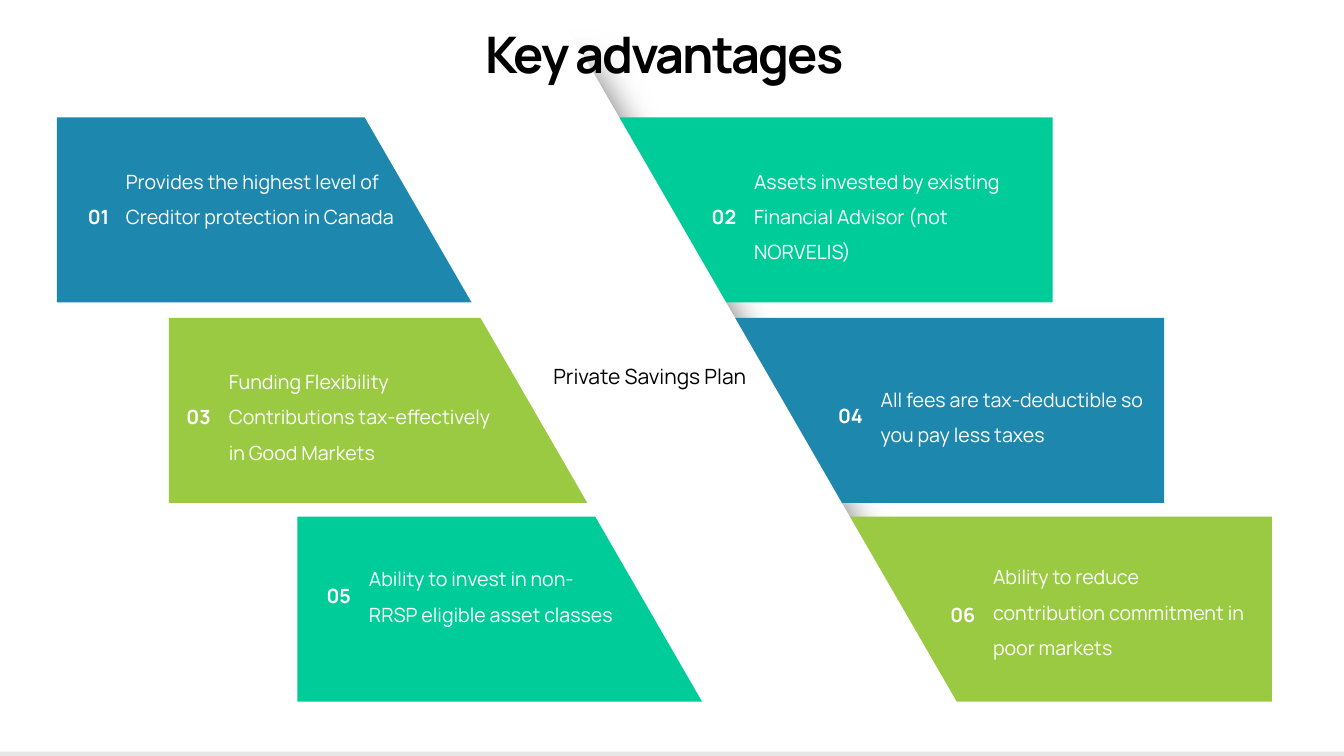
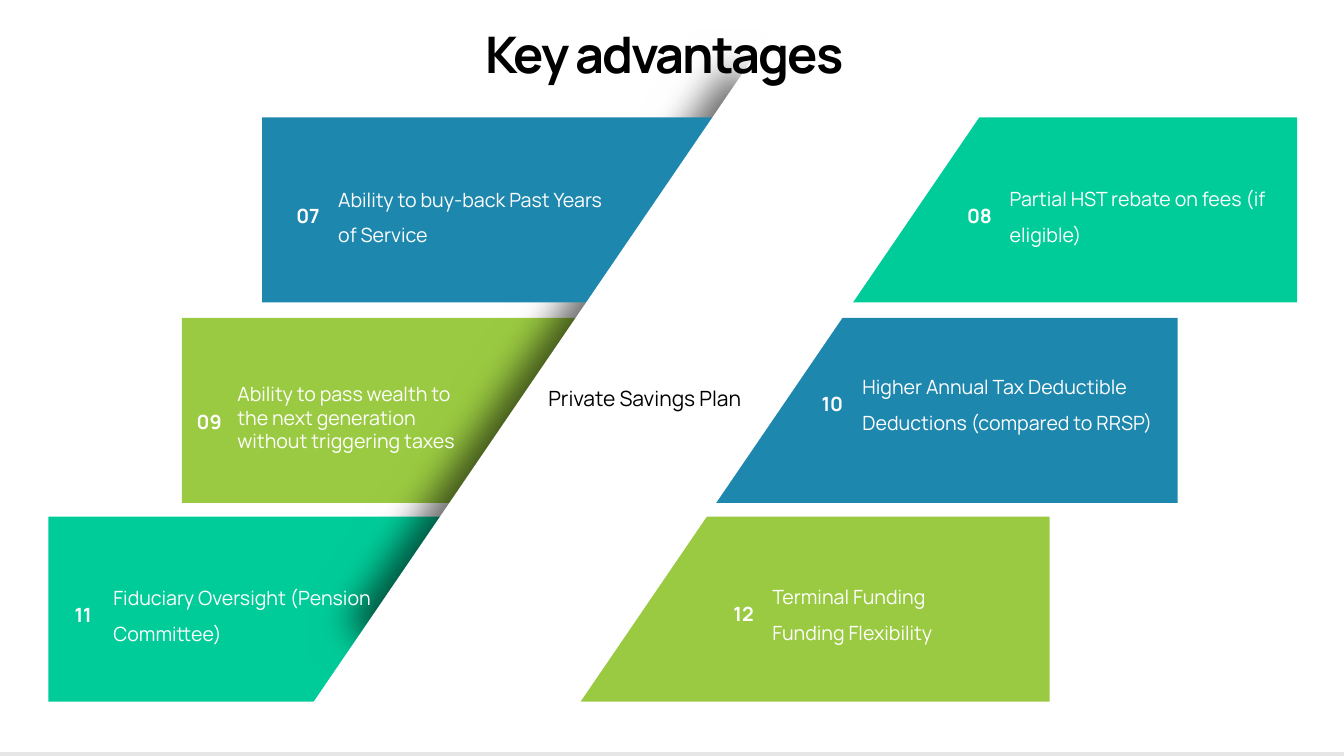
from lxml.etree import SubElement
from pptx import Presentation
from pptx.dml.color import RGBColor
from pptx.enum.shapes import MSO_SHAPE
from pptx.enum.text import MSO_ANCHOR, MSO_AUTO_SIZE, PP_ALIGN
from pptx.oxml.ns import qn
from pptx.util import Inches, Pt

BLUE = RGBColor(0x1E, 0x87, 0xAE)
TEAL = RGBColor(0x00, 0xCC, 0x99)
LIME = RGBColor(0x9A, 0xCA, 0x41)
GREY = RGBColor(0xE6, 0xE6, 0xE6)
WHITE = RGBColor(0xFF, 0xFF, 0xFF)
BLACK = RGBColor(0x00, 0x00, 0x00)

FONT = "Manrope"
ROWS = (2.33, 6.31, 10.25)
HEIGHT = 3.67
LEFT = (BLUE, LIME, TEAL)
RIGHT = (TEAL, BLUE, LIME)

PAGES = [
    {
        "left": [(1.13, 9.2), (3.35, 9.82), (5.9, 8.81)],
        "right": [(11.06, 9.82), (13.27, 9.82), (16.36, 8.87)],
        "inner": [(11, 0.86, 1.33, 13.38, 330), (13.24, 0.94, 1.33, 13.38, 330)],
        "outer": [(11.12, -2.17, 2.71, 19.51, 330), (10.65, -2.1, 4.37, 19.51, 330)],
        "shade": 330,
        "foot": (11.16, 2.75),
        "plan": (10.64, 6.92),
        "items": [
            ("01", 1.53, 3.78, 0.85, 3.08, 5.53, 1.45,
             "Provides the highest level of Creditor protection in Canada"),
            ("02", 13.88, 3.78, 0.96, 3.08, 5.38, 2.15,
             "Assets invested by existing Financial Advisor (not NORVELIS)"),
            ("03", 3.46, 7.76, 0.96, 7.06, 5.7, 2.15,
             "Funding Flexibility Contributions tax-effectively in Good Markets"),
            ("04", 16.39, 7.74, 0.96, 7.41, 5.46, 1.45,
             "All fees are tax-deductible so you pay less taxes"),
            ("05", 6.24, 11.3, 0.96, 10.97, 5.19, 2.15,
             "Ability to invest in non-RRSP eligible asset classes"),
            ("06", 18.62, 11.68, 0.96, 10.93, 5.23, 2.15,
             "Ability to reduce contribution commitment in poor markets"),
        ],
    },
    {
        "left": [(5.2, 9.2), (3.61, 9.82), (0.96, 8.81)],
        "right": [(15.91, 9.82), (13.54, 9.82), (11.52, 9.3)],
        "inner": [(11, 0.86, 1.33, 13.38, 34.5), (13.24, 0.94, 1.33, 13.38, 35.8)],
        "outer": [(11.12, -2.17, 2.71, 19.51, 33.4), (10.98, -2.13, 4.37, 19.51, 34.3)],
        "shade": 214,
        "foot": (10.99, 2.76),
        "plan": (10.54, 7.35),
        "items": [
            ("07", 5.63, 3.77, 0.96, 3.44, 5.52, 1.45,
             "Ability to buy-back Past Years of Service"),
            ("08", 18.95, 3.76, 0.96, 3.43, 5.55, 1.45,
             "Partial HST rebate on fees (if eligible)"),
            ("09", 3.71, 7.86, 0.88, 7.53, 4.95, 1.51,
             "Ability to pass wealth to the next generation without triggering taxes"),
            ("10", 16.03, 7.49, 0.96, 7.16, 6.25, 2.15,
             "Higher Annual Tax Deductible Deductions (compared to RRSP)"),
            ("11", 1.17, 11.68, 0.96, 11.35, 5.38, 1.45,
             "Fiduciary Oversight (Pension Committee)"),
            ("12", 14.3, 11.66, 0.9, 11.33, 5.82, 1.45,
             "Terminal Funding\nFunding Flexibility"),
        ],
    },
]


class Deck:
    def __init__(self):
        self.file = Presentation()
        self.file.slide_width = Inches(26.66)
        self.file.slide_height = Inches(15)
        self.slide = None

    def start(self):
        self.slide = self.file.slides.add_slide(self.file.slide_layouts[5])

    def block(self, left, top, width, height, fill, turn=0):
        box = self.slide.shapes.add_shape(
            MSO_SHAPE.RECTANGLE, Inches(left), Inches(top), Inches(width), Inches(height))
        box.shadow.inherit = False
        box.fill.solid()
        box.fill.fore_color.rgb = fill
        box.line.fill.background()
        box.rotation = turn
        return box

    def strip(self, left, top, width, height, turn, shade=None):
        band = self.block(left, top, width, height, WHITE, turn)
        if shade is not None:
            effect = band.element.spPr.find(qn("a:effectLst"))
            outer = SubElement(effect, qn("a:outerShdw"), blurRad=str(Pt(53)),
                               dist=str(Pt(40)), dir=str(shade * 60000), rotWithShape="0")
            color = SubElement(outer, qn("a:srgbClr"), val=str(BLACK))
            SubElement(color, qn("a:alpha"), val="58000")

    def style(self, frame, size, color, bold=False, align=PP_ALIGN.LEFT, space=None):
        frame.word_wrap = True
        frame.auto_size = MSO_AUTO_SIZE.SHAPE_TO_FIT_TEXT
        for para in frame.paragraphs:
            para.alignment = align
            para.line_spacing = space
            for run in para.runs:
                run.font.name = FONT
                run.font.size = Pt(size)
                run.font.bold = bold
                run.font.color.rgb = color

    def label(self, text, left, top, width, height, size=28, color=WHITE,
              bold=False, align=PP_ALIGN.LEFT, space=1.5):
        box = self.slide.shapes.add_textbox(
            Inches(left), Inches(top), Inches(width), Inches(height))
        box.text_frame.text = text
        self.style(box.text_frame, size, color, bold, align, space)
        return box

    def title(self, text):
        head = self.slide.shapes.title
        head.left, head.top = Inches(7.99), Inches(0.41)
        head.width, head.height = Inches(10.38), Inches(1.31)
        frame = head.text_frame
        frame.text = text
        frame.vertical_anchor = MSO_ANCHOR.MIDDLE
        self.style(frame, 72, BLACK, True, PP_ALIGN.CENTER)
        frame.paragraphs[0].runs[0].font._element.set("spc", "-300")
        self.slide.shapes.element.append(head.element)

    def item(self, number, left, top, width, text_top, text_width, height, text):
        self.label(number, left, top, width, 0.74, bold=True, align=PP_ALIGN.CENTER)
        space = 1 if number == "09" else 1.5
        note = self.label(text, left + width + 0.02, text_top, text_width, height, space=space)
        if number in ("09", "11"):
            note.text_frame.paragraphs[0].space_after = Pt(6)

    def page(self, data):
        self.start()
        left = [(x, y, w, HEIGHT, c) for (x, w), y, c in zip(data["left"], ROWS, LEFT)]
        right = [(x, y, w, HEIGHT, c) for (x, w), y, c in zip(data["right"], ROWS, RIGHT)]
        for spot in (left[2], left[1]):
            self.block(*spot)
        for spot in data["inner"]:
            self.strip(*spot, shade=data["shade"])
        for spot in (left[0], *right):
            self.block(*spot)
        for spot in data["outer"]:
            self.strip(*spot)
        self.block(*data["foot"], 5.42, 29.75, GREY, 90)
        self.title("Key advantages")
        for entry in data["items"]:
            self.item(*entry)
        self.label("Private Savings Plan", *data["plan"], 4.5, 1.54,
                   size=30, color=BLACK, align=PP_ALIGN.CENTER)


def main():
    deck = Deck()
    for data in PAGES:
        deck.page(data)
    deck.file.save("out.pptx")


if __name__ == "__main__":
    main()
